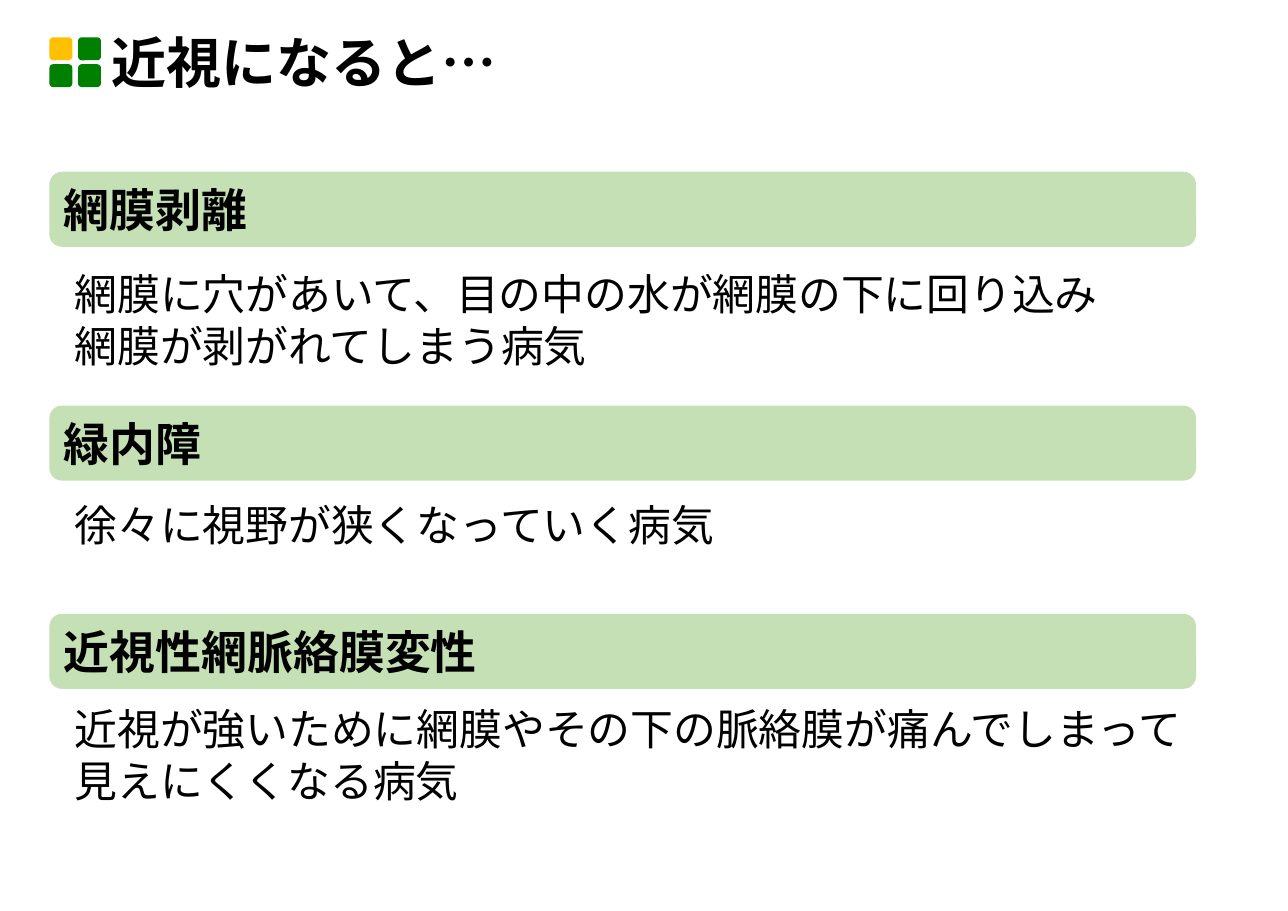
import pptx
import pptx.dml.color
import pptx.enum.lang
import pptx.enum.shapes
import pptx.enum.text
import pptx.util
from lxml import etree

Cm = pptx.util.Cm
Pt = pptx.util.Pt
RGB = pptx.dml.color.RGBColor
MID = pptx.enum.text.MSO_ANCHOR.MIDDLE
TOP = pptx.enum.text.MSO_ANCHOR.TOP

BLACK = RGB(0, 0, 0)
GOLD = RGB(0xFF, 0xC0, 0x00)
GREEN = RGB(0x00, 0x80, 0x00)
PALE = RGB(0xC5, 0xE0, 0xB4)
FONT = "Noto Sans CJK JP"
DML = "{http://schemas.openxmlformats.org/drawingml/2006/main}"

LEFT = 1.14
WIDTH = 26.44

TOPICS = [
    (3.96, 6.05, "網膜剥離", "Arial",
     "網膜に穴があいて、目の中の水が網膜の下に回り込み\v網膜が剥がれてしまう病気"),
    (9.35, 11.38, "緑内障", "Arial",
     "徐々に視野が狭くなっていく病気"),
    (14.15, 16.08, "近視性網脈絡膜変性", FONT,
     "近視が強いために網膜やその下の脈絡膜が痛んでしまって\v見えにくくなる病気"),
]


def write(shape, text, size, bold=False, face=FONT, anchor=MID, space=None):
    frame = shape.text_frame
    frame.word_wrap = True
    frame.auto_size = pptx.enum.text.MSO_AUTO_SIZE.NONE
    frame.vertical_anchor = anchor
    para = frame.paragraphs[0]
    para.text = text
    para.alignment = pptx.enum.text.PP_ALIGN.LEFT
    para.line_spacing = space
    for run in para.runs:
        font = run.font
        font.size = Pt(size)
        font.bold = bold
        font.color.rgb = BLACK
        font.name = face
        font.language_id = pptx.enum.lang.MSO_LANGUAGE_ID.JAPANESE
        latin = run._r.rPr.find(DML + "latin")
        east = etree.Element(DML + "ea", typeface=FONT)
        latin.addnext(east)


def block(slide, left, top, width, height, fill):
    kind = pptx.enum.shapes.MSO_SHAPE.ROUNDED_RECTANGLE
    shape = slide.shapes.add_shape(kind, Cm(left), Cm(top), Cm(width), Cm(height))
    shape.shadow.inherit = False
    shape.fill.solid()
    shape.fill.fore_color.rgb = fill
    shape.line.fill.background()
    return shape


def logo(slide):
    for row in range(2):
        for col in range(2):
            fill = GOLD if row == col == 0 else GREEN
            block(slide, LEFT + 0.66 * col, 0.86 + 0.62 * row, 0.53, 0.53, fill)


def title(slide, text):
    shape = slide.shapes.title
    shape.left, shape.top = Cm(2.31), Cm(0.65)
    shape.width, shape.height = Cm(25.2), Cm(1.73)
    write(shape, text, 36, bold=True, space=0.9)


def header(slide, top, text, face):
    bar = block(slide, LEFT, top, WIDTH, 1.73, PALE)
    write(bar, text, 30, bold=True, face=face)


def body(slide, top, text):
    box = slide.shapes.add_textbox(Cm(1.47), Cm(top), Cm(WIDTH), Cm(2.82))
    write(box, text, 28, anchor=TOP, space=Pt(33.6))


def main():
    deck = pptx.Presentation()
    deck.slide_width, deck.slide_height = Cm(29.7), Cm(21)
    slide = deck.slides.add_slide(deck.slide_layouts[5])
    logo(slide)
    title(slide, "近視になると…")
    for bar, base, name, face, text in TOPICS:
        header(slide, bar, name, face)
        body(slide, base, text)
    deck.save("out.pptx")


if __name__ == "__main__":
    main()
